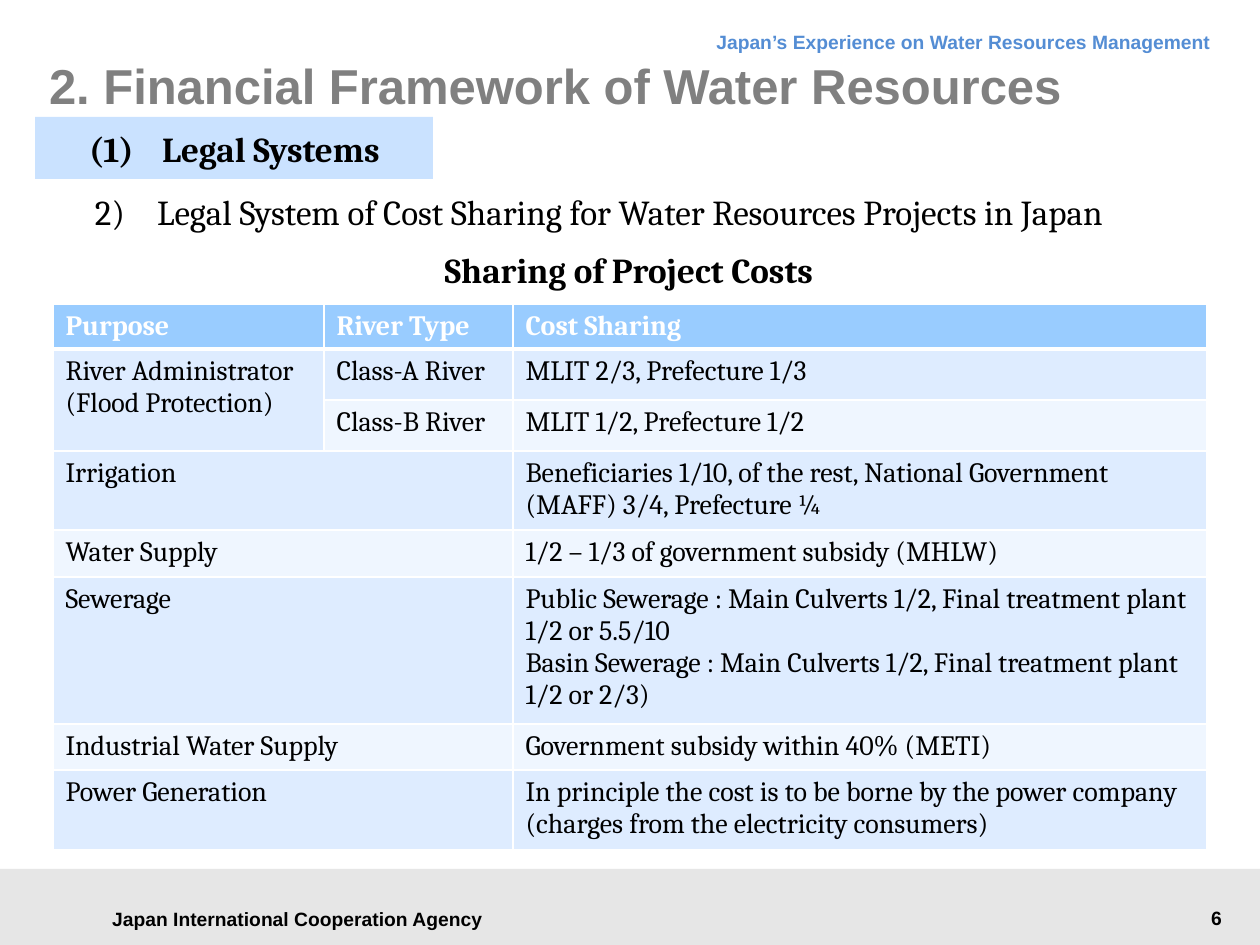
from lxml.etree import SubElement
from pptx import Presentation
from pptx.dml.color import RGBColor
from pptx.enum.shapes import MSO_SHAPE as Shape
from pptx.enum.text import MSO_ANCHOR as Anchor, MSO_AUTO_SIZE as AutoSize, PP_ALIGN as Align
from pptx.oxml.ns import qn
from pptx.util import Emu, Pt

BLACK = RGBColor(0x00, 0x00, 0x00)
WHITE = RGBColor(0xFF, 0xFF, 0xFF)
TITLE_GREY = RGBColor(0x80, 0x80, 0x80)
BAND_GREY = RGBColor(0xE6, 0xE6, 0xE6)
RUNNING_BLUE = RGBColor(0x54, 0x8D, 0xD4)
SECTION_BLUE = RGBColor(0xCA, 0xE2, 0xFF)
HEADER_BLUE = RGBColor(0x99, 0xCC, 0xFF)
ROW_BLUES = RGBColor(0xDE, 0xEC, 0xFF), RGBColor(0xEF, 0xF6, 0xFF)

TITLE = "2. Financial Framework of Water Resources"
RUNNING_HEAD = "Japan’s Experience on Water Resources Management"
AGENCY = "Japan International Cooperation Agency"
PAGE_NUMBER = "6"
SECTION = "(1)\tLegal Systems"
TOPIC = "2)\tLegal System of Cost Sharing for Water Resources Projects in Japan"
TABLE_HEADING = "Sharing of Project Costs"

# None marks a cell covered by the one above or to the left.
COSTS = [
    ("Purpose", "River Type", "Cost Sharing"),
    ("River Administrator\n(Flood Protection)", "Class-A River", "MLIT 2/3, Prefecture 1/3"),
    (None, "Class-B River", "MLIT 1/2, Prefecture 1/2"),
    ("Irrigation", None,
     "Beneficiaries 1/10, of the rest, National Government (MAFF) 3/4, Prefecture ¼"),
    ("Water Supply", None, "1/2 – 1/3 of government subsidy (MHLW)"),
    ("Sewerage", None,
     "Public Sewerage : Main Culverts 1/2, Final treatment plant 1/2 or 5.5/10\n"
     "Basin Sewerage : Main Culverts 1/2, Final treatment plant 1/2 or 2/3)"),
    ("Industrial Water Supply", None, "Government subsidy within 40% (METI)"),
    ("Power Generation", None,
     "In principle the cost is to be borne by the power company "
     "(charges from the electricity consumers)"),
]
COLUMN_WIDTHS = [271, 189, 694]
ROW_HEIGHTS = [45, 51, 51, 79, 47, 147, 46, 80]


def px(length):
    return Emu(round(length * 914400 / 126))


def place(shape, left, top, width, height):
    shape.left, shape.top = px(left), px(top)
    shape.width, shape.height = px(width), px(height)


def write(frame, text, size, font="Cambria", color=BLACK, bold=False,
          align=Align.LEFT, spacing=None, hanging=0):
    """Fill a text frame, one paragraph per line of text."""
    frame.text = text
    for para in frame.paragraphs:
        para.alignment = align
        para.space_before = Pt(0)
        if spacing:
            para.line_spacing = Pt(spacing)
        if hanging:
            props = para._p.get_or_add_pPr()
            props.set("marL", str(px(hanging)))
            props.set("indent", str(-px(hanging)))
            SubElement(props, qn("a:buNone"))
        for span in para.runs:
            span.font.name, span.font.size = font, Pt(size)
            span.font.bold, span.font.color.rgb = bold, color


def set_frame(frame, anchor=Anchor.TOP, margins=(13, 6, 13, 6), wrap=True):
    frame.auto_size = AutoSize.NONE
    frame.word_wrap = wrap
    frame.vertical_anchor = anchor
    (frame.margin_left, frame.margin_top,
     frame.margin_right, frame.margin_bottom) = map(px, margins)


def add_text(page, text, bounds, size, anchor=Anchor.TOP, margins=(13, 6, 13, 6), **style):
    box = page.shapes.add_textbox(*map(px, bounds))
    set_frame(box.text_frame, anchor, margins)
    write(box.text_frame, text, size, **style)


def add_block(page, bounds, color):
    block = page.shapes.add_shape(Shape.RECTANGLE, *map(px, bounds))
    block.shadow.inherit = False
    block.fill.solid()
    block.fill.fore_color.rgb = color
    block.line.fill.background()
    return block


def set_borders(cell, **widths):
    for side in "LRTB":
        line = SubElement(cell._tc.get_or_add_tcPr(), qn(f"a:ln{side}"),
                          w=str(Pt(widths.get(side, 1))))
        fill = SubElement(line, qn("a:solidFill"))
        SubElement(fill, qn("a:srgbClr"), val=str(WHITE))


def add_cost_table(page, left, top):
    table = page.shapes.add_table(
        len(COSTS), len(COLUMN_WIDTHS), px(left), px(top),
        px(sum(COLUMN_WIDTHS)), px(sum(ROW_HEIGHTS))).table
    for column, width in zip(table.columns, COLUMN_WIDTHS):
        column.width = px(width)
    for r, (texts, height) in enumerate(zip(COSTS, ROW_HEIGHTS)):
        table.rows[r].height = px(height)
        header = r == 0
        for c, text in enumerate(texts):
            cell = table.cell(r, c)
            set_borders(cell, B=3 if header else 1, T=3 if r == 1 else 1)
            cell.fill.solid()
            cell.fill.fore_color.rgb = HEADER_BLUE if header else ROW_BLUES[(r - 1) % 2]
            if text:
                write(cell.text_frame, text, 16, bold=header,
                      color=WHITE if header else BLACK)
        if texts[1] is None:
            table.cell(r, 0).merge(table.cell(r, 1))
        if texts[0] is None:
            table.cell(r - 1, 0).merge(table.cell(r, 0))


def main():
    deck = Presentation()
    deck.slide_width, deck.slide_height = px(1260), px(945)
    page = deck.slides.add_slide(deck.slide_layouts[1])
    title, topic = page.placeholders

    add_block(page, (0, 869, 1260, 76), BAND_GREY)
    label = dict(font="Arial", bold=True)
    add_text(page, AGENCY, (89, 897, 417, 43), 11, anchor=Anchor.MIDDLE,
             align=Align.CENTER, **label)
    add_text(page, RUNNING_HEAD, (343, 16, 881, 48), 11, color=RUNNING_BLUE,
             align=Align.RIGHT, spacing=18, **label)
    add_text(page, PAGE_NUMBER, (1037, 900, 198, 37), 11, align=Align.RIGHT, **label)

    place(title, 49, 35, 1134, 100)
    set_frame(title.text_frame, Anchor.MIDDLE, (0, 0, 0, 0))
    write(title.text_frame, TITLE, 28, color=TITLE_GREY, **label)

    section = add_block(page, (35, 117, 398, 62), SECTION_BLUE)
    set_frame(section.text_frame, Anchor.MIDDLE, (54, 10, 44, 10), wrap=False)
    write(section.text_frame, SECTION, 20, bold=True, hanging=73)

    place(topic, 82, 184, 1134, 55)
    set_frame(topic.text_frame)
    write(topic.text_frame, TOPIC, 20, hanging=62)

    add_text(page, TABLE_HEADING, (321, 262, 616, 29), 20, margins=(0, 0, 0, 0),
             bold=True, align=Align.CENTER, spacing=16)
    add_cost_table(page, 53, 304)
    deck.save("out.pptx")


if __name__ == "__main__":
    main()
